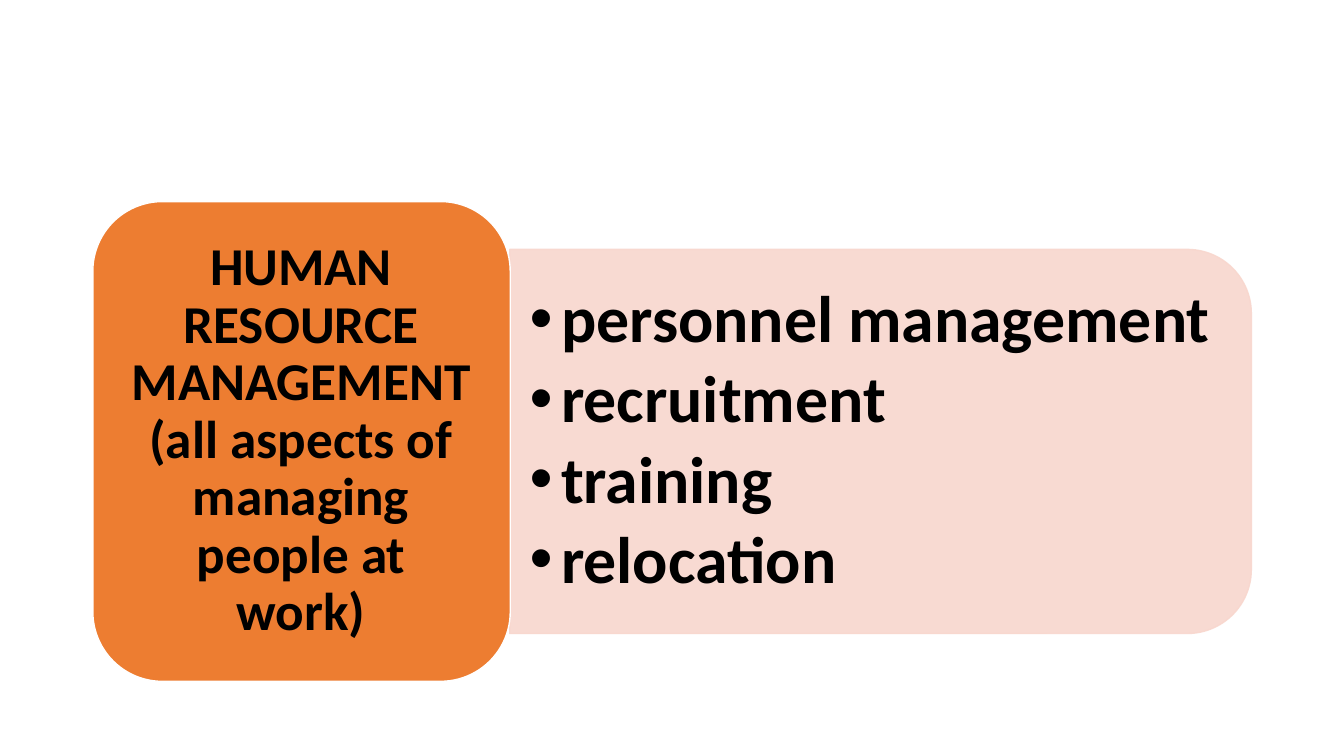
from dataclasses import dataclass

from lxml.etree import SubElement
from pptx import Presentation
from pptx.dml.color import RGBColor
from pptx.enum.shapes import MSO_SHAPE
from pptx.enum.text import MSO_ANCHOR, MSO_AUTO_SIZE, PP_ALIGN
from pptx.oxml.ns import qn
from pptx.shapes.autoshape import Shape
from pptx.slide import Slide
from pptx.util import Cm, Pt

TOPIC = "HUMAN RESOURCE MANAGEMENT (all aspects of managing people at work)"
ACTIVITIES = ["personnel management", "recruitment", "training", "relocation"]
HANGING_INDENT = Cm(0.79)


@dataclass
class Frame:
    """Left, top, width and height in centimetres."""
    left: float
    top: float
    width: float
    height: float

    def lengths(self) -> tuple[Cm, Cm, Cm, Cm]:
        return Cm(self.left), Cm(self.top), Cm(self.width), Cm(self.height)


@dataclass
class Panel:
    preset: MSO_SHAPE
    frame: Frame
    fill: str
    line: str
    rotation: int = 0
    opacity: int = 100


@dataclass
class TextArea:
    frame: Frame
    lines: list[str]
    size: int
    inset: float
    alignment: PP_ALIGN
    space_after: float = 0
    bulleted: bool = False


PANELS = [
    Panel(MSO_SHAPE.ROUND_2_SAME_RECTANGLE, Frame(17.35, 1.78, 9.68, 18.69),
          "F8D7CE", "F8D7CE", rotation=90, opacity=90),
    Panel(MSO_SHAPE.ROUNDED_RECTANGLE, Frame(2.34, 5.08, 10.52, 12.09),
          "ED7D31", "FFFFFF"),
]
TOPIC_AREA = TextArea(Frame(2.84, 5.59, 9.5, 11.05), [TOPIC], 38, 0.4,
                      PP_ALIGN.CENTER)
ACTIVITY_AREA = TextArea(Frame(12.85, 6.76, 18.21, 8.74), ACTIVITIES, 47, 0.5,
                         PP_ALIGN.LEFT, space_after=6.5, bulleted=True)


def color(value: str) -> RGBColor:
    return RGBColor.from_string(value)


def draw_panel(page: Slide, panel: Panel) -> None:
    shape = page.shapes.add_shape(panel.preset, *panel.frame.lengths())
    shape.rotation = panel.rotation
    shape.shadow.inherit = False
    shape.fill.solid()
    shape.fill.fore_color.rgb = color(panel.fill)
    shape.line.color.rgb = color(panel.line)
    shape.line.width = Pt(1)
    if panel.opacity < 100:
        for tone in shape.element.spPr.iter(qn("a:srgbClr")):
            SubElement(tone, qn("a:alpha"), val=str(panel.opacity * 1000))


def fill_placeholder(page: Slide, box: Shape, area: TextArea) -> None:
    """Move the placeholder in front of the panels and write its text."""
    page.shapes.element.append(box.element)
    box.left, box.top, box.width, box.height = area.frame.lengths()
    frame = box.text_frame
    frame.text = "\n".join(area.lines)
    frame.word_wrap = True
    frame.auto_size = MSO_AUTO_SIZE.NONE
    frame.vertical_anchor = MSO_ANCHOR.MIDDLE
    frame.margin_left = frame.margin_right = Cm(area.inset)
    frame.margin_top = frame.margin_bottom = Cm(area.inset / 2)
    for para in frame.paragraphs:
        para.alignment = area.alignment
        para.line_spacing = 0.9
        para.space_before = Pt(0)
        para.space_after = Pt(area.space_after)
        if area.bulleted:
            properties = para._p.get_or_add_pPr()
            properties.set("marL", str(HANGING_INDENT))
            properties.set("indent", str(-HANGING_INDENT))
            SubElement(properties, qn("a:buChar"), char="•")
        para.font.name = "Calibri"
        para.font.size = Pt(area.size)
        para.font.bold = True
        para.font.color.rgb = color("000000")


def main() -> None:
    deck = Presentation()
    deck.slide_width, deck.slide_height = Cm(33.87), Cm(19.05)
    page = deck.slides.add_slide(deck.slide_layouts.get_by_name("Title and Content"))
    title, body = page.placeholders
    activity_panel, topic_panel = PANELS
    draw_panel(page, activity_panel)
    fill_placeholder(page, body, ACTIVITY_AREA)
    draw_panel(page, topic_panel)
    fill_placeholder(page, title, TOPIC_AREA)
    deck.save("out.pptx")


if __name__ == "__main__":
    main()
